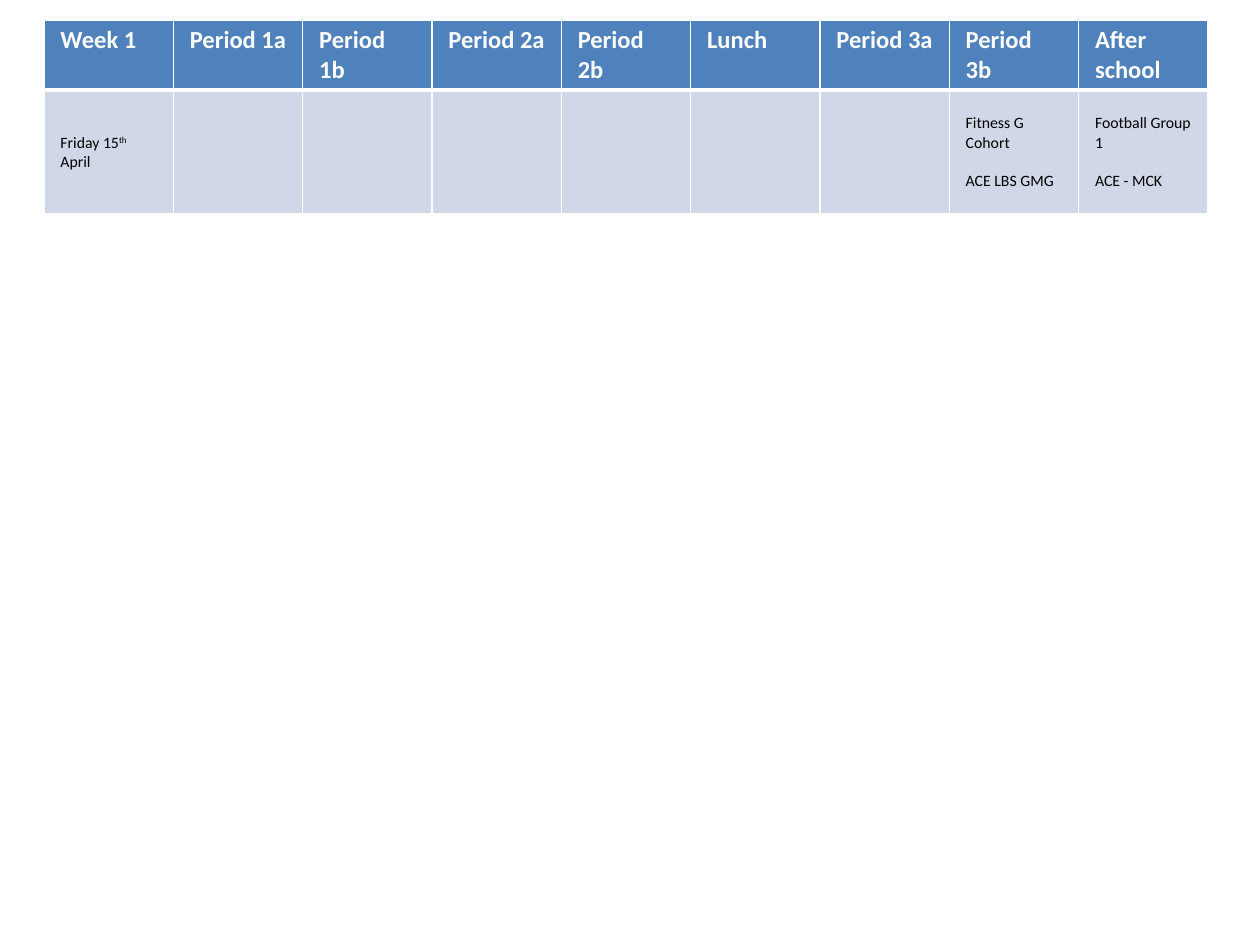
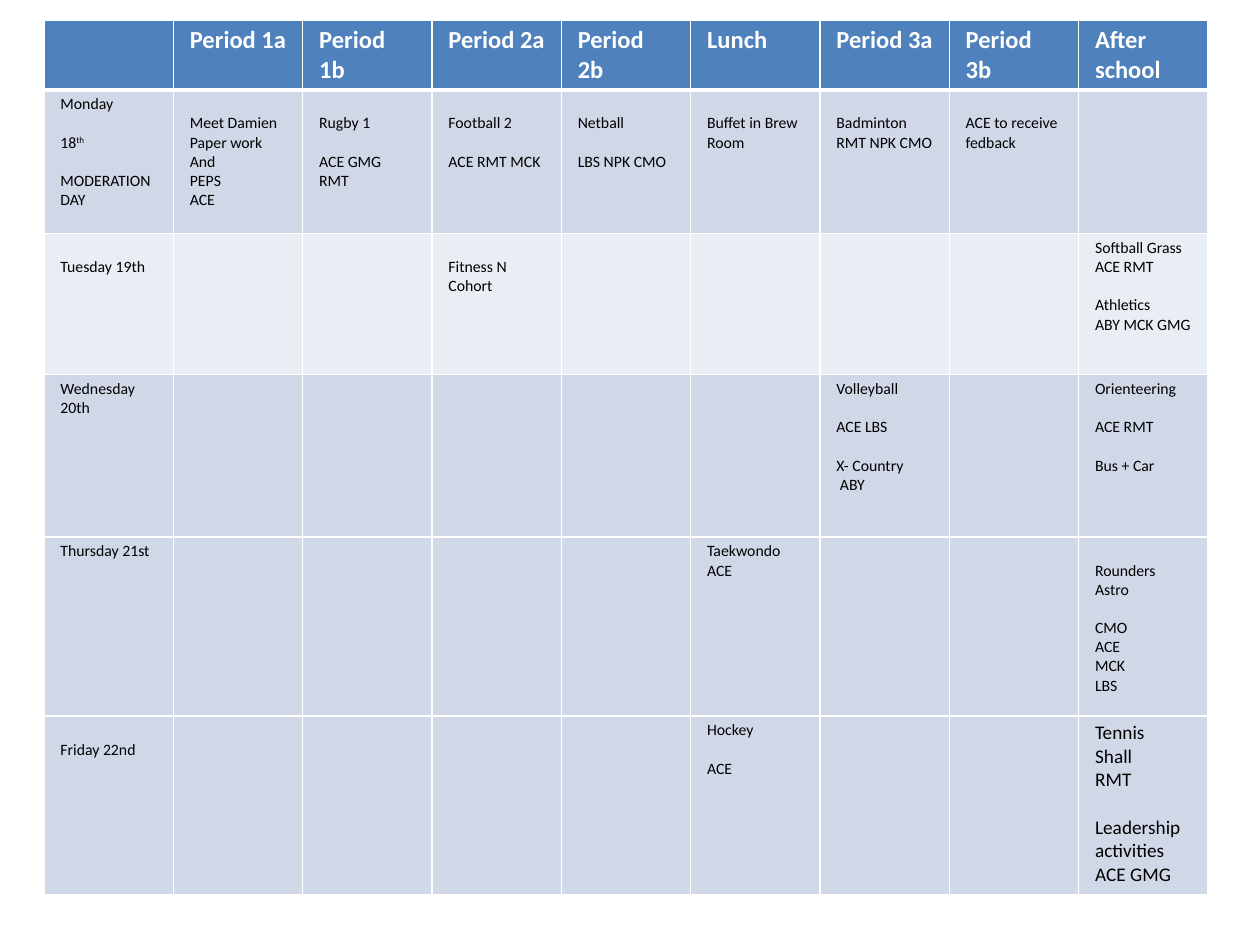
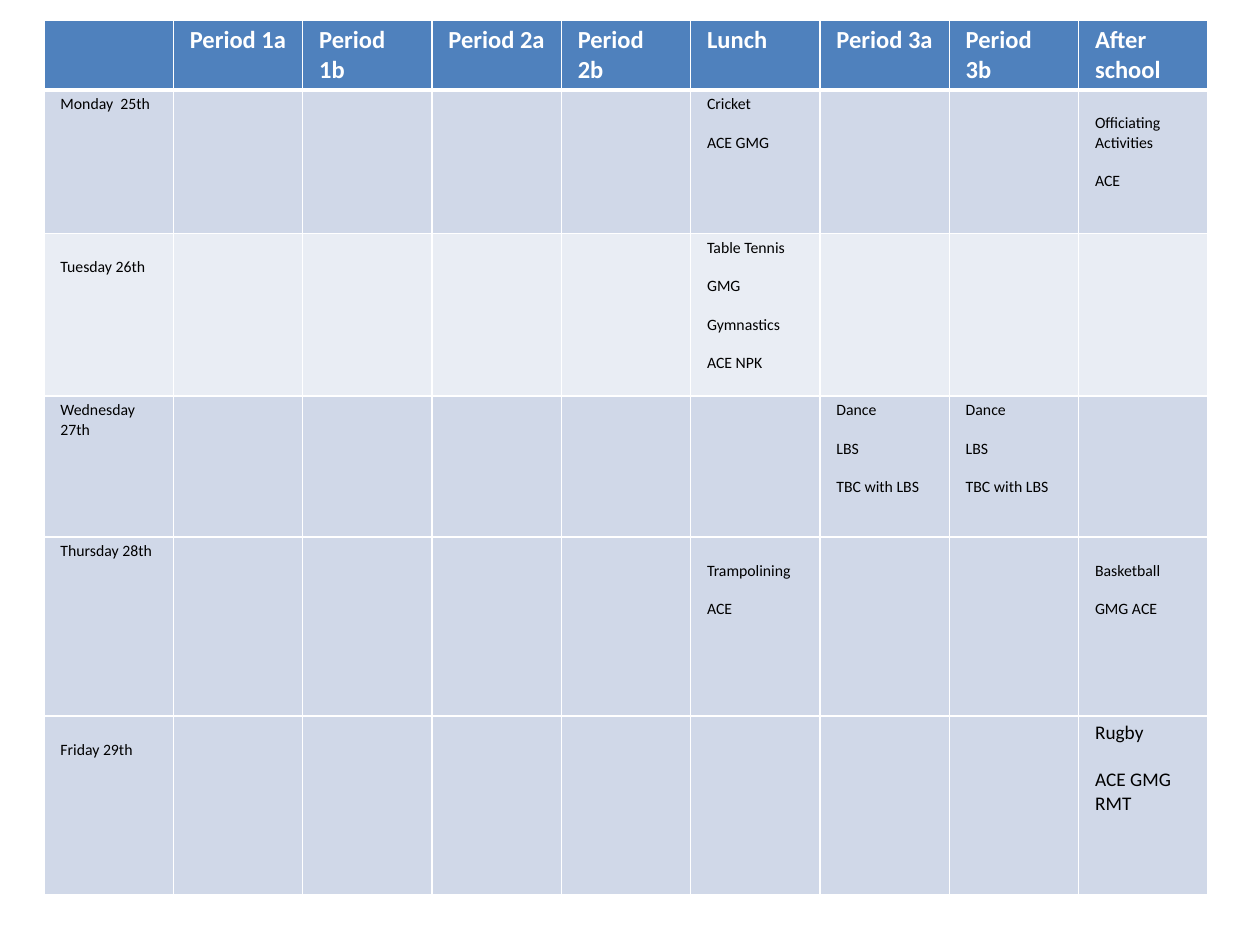
from lxml import etree
from pptx import Presentation
from pptx.dml.color import RGBColor
from pptx.oxml.ns import qn
from pptx.util import Inches, Pt

COLORS = {
    "header": "4F81BD",
    "band_dark": "D0D8E8",
    "band_light": "E9EDF4",
    "border": "FFFFFF",
    "header_text": "FFFFFF",
    "body_text": "000000",
}
FONT = "Calibri"
LINE_SPACING = 1.22
LEFT, TOP, WIDTH = 0.35, 0.16, 9.24
SIDE_INSET, EDGE_INSET = 0.13, 0.04
HEADER_HEIGHT = 0.54
HEADER_SIZE, BODY_SIZE, LARGE_SIZE = 14, 9, 11
THIN, THICK = 1, 3

PERIODS = ["Period 1a", "Period 1b", "Period 2a", "Period 2b", "Lunch",
           "Period 3a", "Period 3b", "After school"]
COLUMNS = ["Day"] + PERIODS

# Each day: row height and entries by column; an empty line is a gap,
# and text between ^ marks is superscript
WEEKS = [
    ("Week 1", [
        (0.98, {"Day": "\n\nFriday 15^th^ April",
                "Period 3b": "\nFitness G Cohort\n\nACE LBS GMG",
                "After school": "\nFootball Group 1\n\nACE - MCK"}),
    ]),
    ("", [
        (1.14, {"Day": "Monday\n\n18^th^\n\nMODERATION\nDAY",
                "Period 1a": "\nMeet Damien\nPaper work\nAnd\nPEPS\nACE",
                "Period 1b": "\nRugby 1\n\nACE GMG\nRMT",
                "Period 2a": "\nFootball 2\n\nACE RMT MCK",
                "Period 2b": "\nNetball\n\nLBS NPK CMO",
                "Lunch": "\nBuffet in Brew Room",
                "Period 3a": "\nBadminton\nRMT NPK CMO",
                "Period 3b": "\nACE to receive fedback"}),
        (1.12, {"Day": "\nTuesday 19th",
                "Period 2a": "\nFitness N Cohort",
                "After school": "Softball Grass\nACE RMT\n\nAthletics\nABY MCK GMG"}),
        (1.29, {"Day": "Wednesday 20th",
                "Period 3a": "Volleyball\n\nACE LBS\n\nX- Country\n ABY",
                "After school": "Orienteering\n\nACE RMT\n\nBus + Car"}),
        (1.42, {"Day": "Thursday 21st",
                "Lunch": "Taekwondo\nACE",
                "After school": "\nRounders Astro\n\nCMO\nACE\nMCK\nLBS"}),
        (1.42, {"Day": "\nFriday 22nd",
                "Lunch": "Hockey\n\nACE",
                "After school": "Tennis\nShall\nRMT\n\nLeadership activities\nACE GMG"}),
    ]),
    ("", [
        (1.14, {"Day": "Monday  25th",
                "Lunch": "Cricket\n\nACE GMG",
                "After school": "\nOfficiating\nActivities\n\nACE"}),
        (1.29, {"Day": "\nTuesday 26th",
                "Lunch": "Table Tennis\n\nGMG\n\nGymnastics\n\nACE NPK"}),
        (1.12, {"Day": "Wednesday 27th",
                "Period 3a": "Dance\n\nLBS\n\nTBC with LBS",
                "Period 3b": "Dance\n\nLBS\n\nTBC with LBS"}),
        (1.42, {"Day": "Thursday 28th",
                "Lunch": "\nTrampolining\n\nACE",
                "After school": "\nBasketball\n\nGMG ACE"}),
        (1.42, {"Day": "\nFriday 29th",
                "After school": "Rugby\n\nACE GMG\nRMT"}),
    ]),
]


def style_cell(cell, fill, top, bottom):
    cell.fill.solid()
    cell.fill.fore_color.rgb = RGBColor.from_string(COLORS[fill])
    cell.margin_left = cell.margin_right = Inches(SIDE_INSET)
    cell.margin_top = cell.margin_bottom = Inches(EDGE_INSET)
    properties = cell._tc.get_or_add_tcPr()
    sides = [("a:lnL", THIN), ("a:lnR", THIN), ("a:lnT", top), ("a:lnB", bottom)]
    for position, (side, width) in enumerate(sides):
        border = etree.Element(qn(side), w=str(Pt(width)))
        solid = etree.SubElement(border, qn("a:solidFill"))
        etree.SubElement(solid, qn("a:srgbClr"), val=COLORS["border"])
        properties.insert(position, border)


def write_entry(cell, entry, size, color, bold):
    gap, paragraph = 0, None
    for line in entry.split("\n"):
        if not line:
            gap += size * LINE_SPACING
            continue
        if paragraph is None:
            paragraph = cell.text_frame.paragraphs[0]
            cell.margin_top = Inches(EDGE_INSET) + Pt(gap)
        else:
            paragraph = cell.text_frame.add_paragraph()
            paragraph.space_before = Pt(gap)
        gap = 0
        for index, piece in enumerate(line.split("^")):
            if not piece:
                continue
            run = paragraph.add_run()
            run.text = piece
            run.font.name = FONT
            run.font.size = Pt(size)
            run.font.bold = bold
            run.font.color.rgb = RGBColor.from_string(COLORS[color])
            if index % 2:
                run.font._element.set("baseline", "30000")


prs = Presentation()
prs.slide_width, prs.slide_height = Inches(10), Inches(7.5)

for corner, days in WEEKS:
    slide = prs.slides.add_slide(prs.slide_layouts[6])
    height = HEADER_HEIGHT + sum(day_height for day_height, _ in days)
    timetable = slide.shapes.add_table(
        len(days) + 1, len(COLUMNS),
        Inches(LEFT), Inches(TOP), Inches(WIDTH), Inches(height)).table
    timetable.horz_banding = False

    # Header row
    timetable.rows[0].height = Inches(HEADER_HEIGHT)
    for cell, heading in zip(timetable.rows[0].cells, [corner] + PERIODS):
        style_cell(cell, "header", THIN, THICK)
        write_entry(cell, heading, HEADER_SIZE, "header_text", True)

    # One row per day; only the second day has the light band
    for number, (day_height, entries) in enumerate(days, start=1):
        timetable.rows[number].height = Inches(day_height)
        band = "band_light" if number == 2 else "band_dark"
        for cell, column in zip(timetable.rows[number].cells, COLUMNS):
            style_cell(cell, band, THICK if number == 1 else THIN, THIN)
            friday_club = number == 5 and column == "After school"
            size = LARGE_SIZE if friday_club else BODY_SIZE
            write_entry(cell, entries.get(column, ""), size, "body_text", False)

prs.save("out.pptx")
